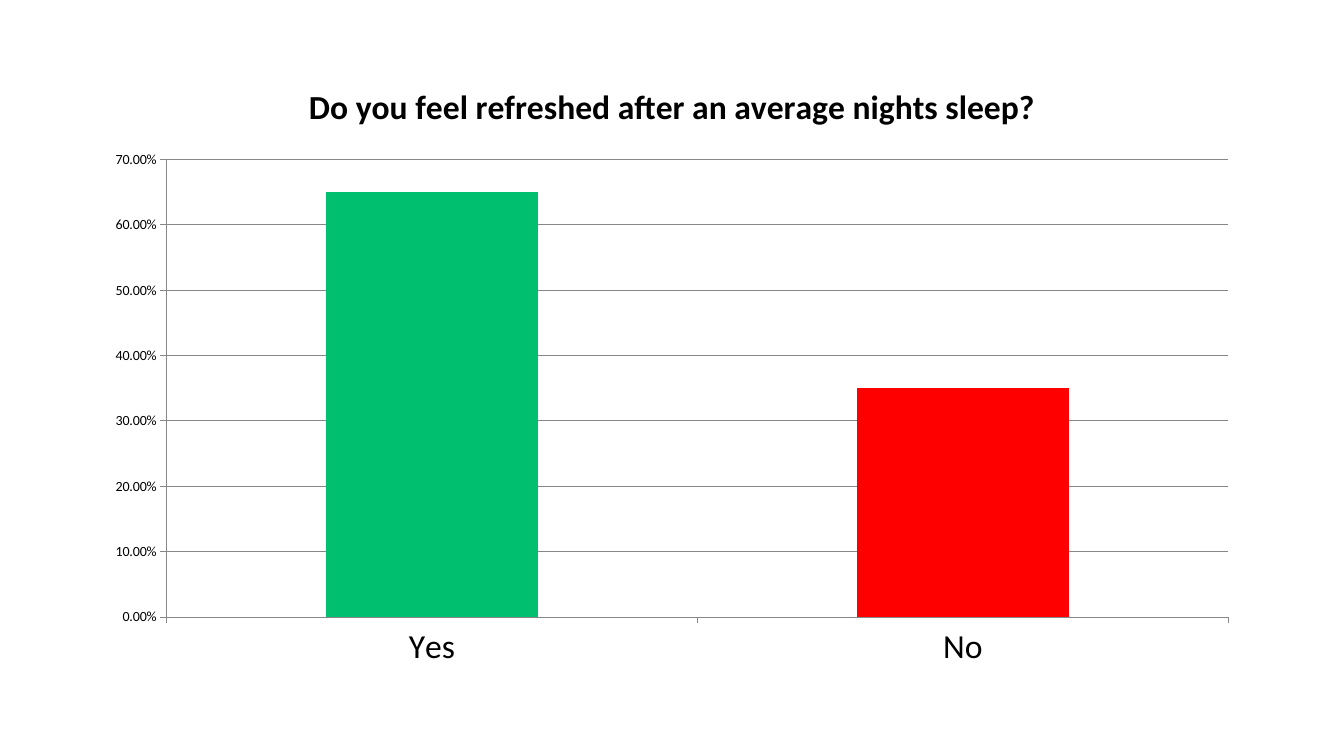
from pptx import Presentation
from pptx.chart.data import CategoryChartData
from pptx.dml.color import RGBColor
from pptx.enum.chart import XL_CHART_TYPE, XL_TICK_MARK
from pptx.util import Pt

BLACK = RGBColor(0x00, 0x00, 0x00)
GRAY = RGBColor(0x87, 0x87, 0x87)
GREEN = RGBColor(0x00, 0xBF, 0x6F)
RED = RGBColor(0xFF, 0x00, 0x00)

deck = Presentation()
deck.slide_width = Pt(960)
deck.slide_height = Pt(540)
slide = deck.slides.add_slide(deck.slide_layouts[6])

answers = CategoryChartData(number_format="0.00%")
answers.categories = ["Yes", "No"]
answers.add_series("Series 1", [0.65, 0.35])

survey = slide.shapes.add_chart(
    XL_CHART_TYPE.COLUMN_CLUSTERED, Pt(66), Pt(43.2), Pt(828), Pt(442.8), answers
).chart
survey.font.name = "Calibri"
survey.font.size = Pt(10)
survey.font.color.rgb = BLACK
survey.has_legend = False

survey.has_title = True
survey.chart_title.include_in_layout = False
question = survey.chart_title.text_frame
question.text = "Do you feel refreshed after an average nights sleep?"
question_font = question.paragraphs[0].runs[0].font
question_font.name = "Calibri"
question_font.size = Pt(24)
question_font.bold = True
question_font.color.rgb = BLACK

responses = survey.category_axis
shares = survey.value_axis
shares.minimum_scale = 0
shares.maximum_scale = 0.7
shares.major_unit = 0.1
shares.has_major_gridlines = True
shares.tick_labels.number_format = "0.00%"
shares.tick_labels.number_format_is_linked = False
responses.tick_labels.font.size = Pt(24)

for axis in (responses, shares):
    axis.major_tick_mark = XL_TICK_MARK.OUTSIDE
    axis.minor_tick_mark = XL_TICK_MARK.NONE
for rule in (responses.format.line, shares.format.line, shares.major_gridlines.format.line):
    rule.color.rgb = GRAY
    rule.width = Pt(0.75)

columns = survey.plots[0]
columns.vary_by_categories = False
columns.gap_width = 150
results = columns.series[0]
results.invert_if_negative = False
results.format.fill.solid()
results.format.fill.fore_color.rgb = GREEN
no_column = results.points[1].format.fill
no_column.solid()
no_column.fore_color.rgb = RED

deck.save("out.pptx")
